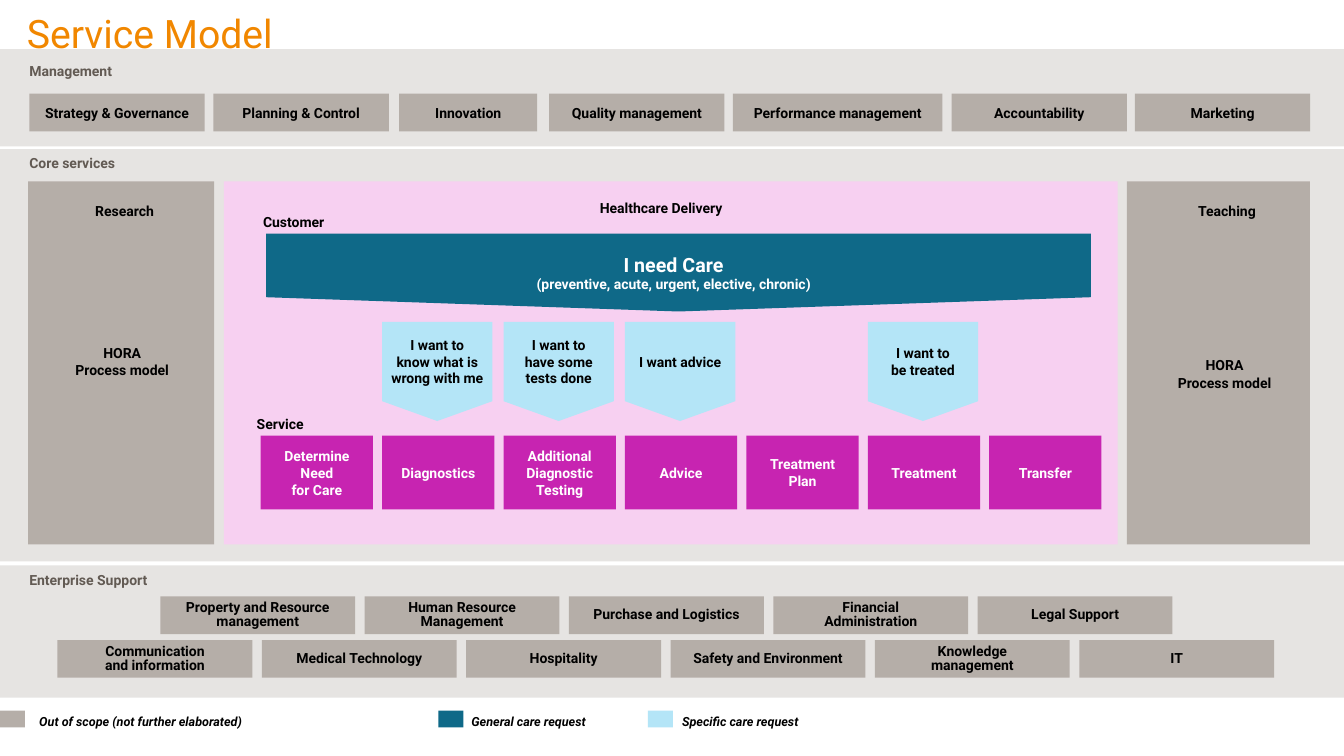
import pptx
import pptx.dml.color
import pptx.enum.shapes
import pptx.enum.text
import pptx.util

Cm, Pt = pptx.util.Cm, pptx.util.Pt
SHAPE = pptx.enum.shapes.MSO_SHAPE
ALIGN = pptx.enum.text.PP_ALIGN
ANCHOR = pptx.enum.text.MSO_ANCHOR

FONT = "Roboto"
COLORS = {
    "title": "F18700", "band": "E6E4E2", "heading": "625A53",
    "out_of_scope": "B5AEA8", "delivery": "F7D0F1", "general": "0F6988",
    "specific": "B4E5F7", "service": "C724B1", "black": "000000", "white": "FFFFFF",
}
SLIDE_WIDTH, SLIDE_HEIGHT = 33.87, 19.05


def rgb(name):
    """Return the named colour."""
    return pptx.dml.color.RGBColor.from_string(COLORS[name])


def write(frame, text, color="black", size=10, bold=True, italic=False,
          align=ALIGN.CENTER, anchor=ANCHOR.MIDDLE, spacing=None, insets=(0.1, 0.1)):
    """Fill a text frame with text in one style."""
    frame.text = text
    frame.word_wrap = True
    frame.vertical_anchor = anchor
    frame.margin_left = frame.margin_right = Cm(insets[0])
    frame.margin_top = frame.margin_bottom = Cm(insets[1])
    for paragraph in frame.paragraphs:
        paragraph.alignment = align
        if spacing:
            paragraph.line_spacing = spacing
        for run in paragraph.runs:
            run.font.name, run.font.size = FONT, Pt(size)
            run.font.bold, run.font.italic = bold, italic
            run.font.color.rgb = rgb(color)


def paint(part, fill):
    """Give a shape a plain fill without line or shadow."""
    part.shadow.inherit = False
    part.fill.solid()
    part.fill.fore_color.rgb = rgb(fill)
    part.line.fill.background()


def block(slide, box, fill, text="", kind=SHAPE.RECTANGLE, **style):
    """Draw a filled block at a box in centimetres, with optional text."""
    part = slide.shapes.add_shape(kind, *map(Cm, box))
    paint(part, fill)
    if text:
        write(part.text_frame, text, **style)


def label(slide, box, text, **style):
    """Place free-standing text at a box in centimetres."""
    part = slide.shapes.add_textbox(*map(Cm, box))
    write(part.text_frame, text, **{"anchor": ANCHOR.TOP, "insets": (0.25, 0.13), **style})


def band(slide, box, heading, heading_drop):
    """Draw a full-width band with its heading."""
    left, top, width, height = box
    block(slide, box, "band")
    label(slide, (left + 0.74, top + heading_drop, 9, 0.5), heading, color="heading",
          align=ALIGN.LEFT, spacing=0.93, insets=(0, 0.02))


def management(slide, box):
    """Draw the management band and its processes."""
    left, top, width, height = box
    band(slide, box, "Management", 0.36)
    processes = [
        ("Strategy & Governance", 0.74, 4.42), ("Planning & Control", 5.38, 4.42),
        ("Innovation", 10.06, 3.48), ("Quality management", 13.84, 4.42),
        ("Performance management", 18.47, 5.28), ("Accountability", 23.98, 4.42),
        ("Marketing", 28.6, 4.42),
    ]
    for process, offset, process_width in processes:
        block(slide, (left + offset, top + 1.12, process_width, 0.95), "out_of_scope", process)


def side_panel(slide, box, heading, text_shift, model_drop):
    """Draw an out-of-scope panel beside the healthcare delivery."""
    left, top, width, height = box
    block(slide, box, "out_of_scope")
    label(slide, (left + text_shift, top + 0.48, 4.42, 0.61), heading, spacing=Pt(10))
    label(slide, (left + text_shift - 0.06, top + model_drop, 4.42, 1.12),
          "HORA\nProcess model", spacing=Pt(12.4))


def general_request(slide, box):
    """Draw the general care request, pointed at its lower edge."""
    left, top, width, height = box
    right, shoulder = left + width, top + 1.6
    outline = [(right, shoulder), (left + width / 2, top + height),
               (left, shoulder), (left, top), (right, top)]
    points = [(Cm(x), Cm(y)) for x, y in outline]
    builder = slide.shapes.build_freeform(*points[0])
    builder.add_line_segments(points[1:], close=True)
    request = builder.convert_to_shape()
    paint(request, "general")
    write(request.text_frame, "I need Care\n(preventive, acute, urgent, elective, chronic)",
          color="white")
    request.text_frame.margin_right = Cm(0.35)
    request.text_frame.paragraphs[0].runs[0].font.size = Pt(14)


def delivery(slide, box):
    """Draw healthcare delivery: care requests above the services they lead to."""
    left, top, width, height = box
    block(slide, box, "delivery")
    label(slide, (left + 8.48, top + 0.48, 5.08, 0.51), "Healthcare Delivery",
          spacing=0.93, insets=(0, 0.02))
    for heading, x, y in [("Customer", 0.74, 0.66), ("Service", 0.58, 5.77)]:
        label(slide, (left + x, top + y, 4.42, 0.69), heading,
              align=ALIGN.LEFT, spacing=Pt(12.4))
    general_request(slide, (left + 1.07, top + 1.32, 20.78, 1.96))
    columns = [
        ("Determine\nNeed\nfor Care", None),
        ("Diagnostics", "I want to\nknow what is\nwrong with me"),
        ("Additional\nDiagnostic\nTesting", "I want to\nhave some\ntests done"),
        ("Advice", "I want advice"),
        ("Treatment\nPlan", None),
        ("Treatment", "I want to\nbe treated"),
        ("Transfer", None),
    ]
    for index, (service, request) in enumerate(columns):
        x = left + 0.93 + 3.06 * index
        block(slide, (x, top + 6.41, 2.83, 1.86), "service", service, color="white")
        if request:
            block(slide, (x, top + 3.54, 2.78, 2.5), "specific", request,
                  kind=SHAPE.FLOWCHART_OFFPAGE_CONNECTOR)


def core_services(slide, box):
    """Draw the core services band with its three panels."""
    left, top, width, height = box
    band(slide, box, "Core services", 0.15)
    panel_top, panel_height = top + 0.81, 9.15
    side_panel(slide, (left + 0.71, panel_top, 4.69, panel_height), "Research", 0.22, 3.96)
    delivery(slide, (left + 5.64, panel_top, 22.53, panel_height))
    side_panel(slide, (left + 28.4, panel_top, 4.61, panel_height), "Teaching", 0.31, 4.28)


def enterprise_support(slide, box):
    """Draw the enterprise support band with two staggered rows."""
    left, top, width, height = box
    band(slide, box, "Enterprise Support", 0.18)
    rows = [
        (4.04, 0.78, ["Property and Resource management", "Human Resource Management",
                      "Purchase and Logistics", "Financial\nAdministration",
                      "Legal Support"]),
        (1.45, 1.88, ["Communication\nand information", "Medical Technology", "Hospitality",
                      "Safety and Environment", "Knowledge\nmanagement", "IT"]),
    ]
    for row_left, drop, functions in rows:
        for index, function in enumerate(functions):
            block(slide, (left + row_left + 5.15 * index, top + drop, 4.91, 0.95),
                  "out_of_scope", function, spacing=Pt(10), insets=(0.1, 0))


def legend(slide, box):
    """Explain the block colours along the foot of the slide."""
    left, top, width, height = box
    entries = [
        ("out_of_scope", 0, 0.74, "Out of scope (not further elaborated)"),
        ("general", 11.05, 11.63, "General care request"),
        ("specific", 16.33, 16.94, "Specific care request"),
    ]
    for fill, swatch_left, text_left, meaning in entries:
        block(slide, (left + swatch_left, top + 0.15, 0.63, 0.42), fill)
        label(slide, (left + text_left, top, 8, height), meaning, size=9, italic=True,
              align=ALIGN.LEFT, spacing=1.26)


def main():
    """Build and save the service model slide."""
    deck = pptx.Presentation()
    deck.slide_width, deck.slide_height = Cm(SLIDE_WIDTH), Cm(SLIDE_HEIGHT)
    slide = deck.slides.add_slide(deck.slide_layouts[5])
    title = slide.shapes.title
    title.left, title.top, title.width, title.height = map(Cm, (0.43, 0.1, 19.02, 1.45))
    write(title.text_frame, "Service Model", color="title", size=28, bold=False,
          align=ALIGN.LEFT, anchor=ANCHOR.TOP, insets=(0.25, 0.13))
    management(slide, (0, 1.24, SLIDE_WIDTH, 2.45))
    core_services(slide, (0, 3.76, SLIDE_WIDTH, 10.39))
    enterprise_support(slide, (0, 14.25, SLIDE_WIDTH, 3.33))
    legend(slide, (0, 17.76, SLIDE_WIDTH, 0.74))
    deck.save("out.pptx")


if __name__ == "__main__":
    main()
